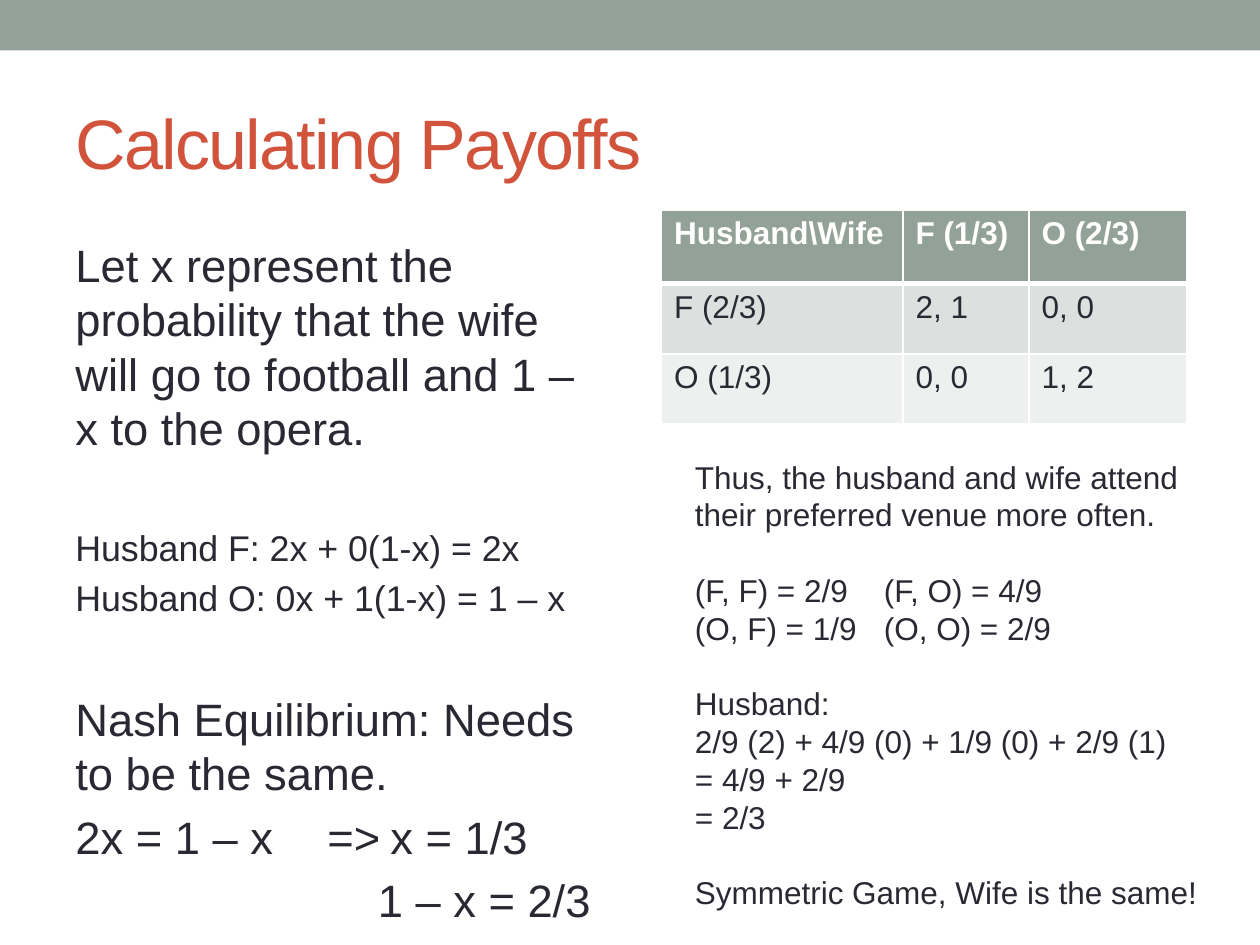
from lxml.etree import SubElement
from pptx import Presentation
from pptx.dml.color import RGBColor
from pptx.enum.shapes import MSO_SHAPE
from pptx.enum.text import MSO_ANCHOR, MSO_AUTO_SIZE
from pptx.oxml.ns import qn
from pptx.util import Inches, Pt

COLORS = {"sage": "93A299", "rust": "D2533C", "ink": "292934", "white": "FFFFFF",
          "band_dark": "DCE0DE", "band_light": "EEF0EF"}
FONT = "Arial"
COLUMNS, ROWS = 120, 90  # grid cells are 1/12 inch
LINE_HEIGHT = 1.2
LARGE, MEDIUM, SMALL = 25.9, 20.4, 18

# (text, size, follows a gap, left indent in grid columns)
DERIVATION = [
    ("Let x represent the probability that the wife will go to football "
     "and 1 – x to the opera.", LARGE, False, 0),
    ("Husband F: 2x + 0(1-x) = 2x", MEDIUM, True, 0),
    ("Husband O: 0x + 1(1-x) = 1 – x", MEDIUM, False, 0),
    ("Nash Equilibrium: Needs to be the same.", LARGE, True, 0),
    ("2x = 1 – x\t=>\tx = 1/3", LARGE, False, 0),
    ("1 – x = 2/3", LARGE, False, 28.8),
]
PAYOFFS = [
    ["Husband\\Wife", "F (1/3)", "O (2/3)"],
    ["F (2/3)", "2, 1", "0, 0"],
    ["O (1/3)", "0, 0", "1, 2"],
]
CONCLUSION = [
    ["Thus, the husband and wife attend their preferred venue more often."],
    ["(F, F) = 2/9\t(F, O) = 4/9", "(O, F) = 1/9\t(O, O) = 2/9"],
    ["Husband:", "2/9 (2) + 4/9 (0) + 1/9 (0) + 2/9 (1)", "= 4/9 + 2/9", "= 2/3"],
    ["Symmetric Game, Wife is the same!"],
]


def grid(units):
    return Inches(units / 12)


def place(box):
    return [grid(units) for units in box]


def color(name):
    return RGBColor.from_string(COLORS[name])


def add_run(paragraph, text, size, ink="ink", bold=False):
    run = paragraph.add_run()
    run.text = text
    run.font.name, run.font.size, run.font.bold = FONT, Pt(size), bold
    run.font.color.rgb = color(ink)
    return run


def add_text_frame(slide, box):
    frame = slide.shapes.add_textbox(*place(box)).text_frame
    frame.word_wrap = True
    return frame


def next_paragraph(frame):
    """Return the empty first paragraph, or a new one once that is used."""
    first = frame.paragraphs[0]
    return frame.add_paragraph() if first.runs else first


def add_band(slide, box):
    band = slide.shapes.add_shape(MSO_SHAPE.RECTANGLE, *place(box))
    band.shadow.inherit = False
    band.fill.solid()
    band.fill.fore_color.rgb = color("sage")
    band.line.fill.background()


def add_title(slide, box):
    frame = add_text_frame(slide, box)
    frame.vertical_anchor = MSO_ANCHOR.MIDDLE
    title = add_run(frame.paragraphs[0], "Calculating Payoffs", 40, "rust")
    title.font._element.set("spc", "-100")


def add_derivation(slide, box):
    """Each line has 20% of its size above it; a gap adds one large line."""
    frame = add_text_frame(slide, box)
    gap_height = LARGE * (LINE_HEIGHT + 0.2)
    for text, size, gap, indent in DERIVATION:
        paragraph = next_paragraph(frame)
        paragraph.space_before = Pt(0.2 * size + gap * gap_height)
        if indent:
            paragraph._p.get_or_add_pPr().set("marL", str(grid(indent)))
        add_run(paragraph, text, size)


def add_cell_borders(cell, bottom_width):
    properties = cell._tc.get_or_add_tcPr()
    widths = {"a:lnL": 1, "a:lnR": 1, "a:lnT": 1, "a:lnB": bottom_width}
    for position, (tag, width) in enumerate(widths.items()):
        border = SubElement(properties, qn(tag), w=str(Pt(width)))
        properties.insert(position, border)
        fill = SubElement(border, qn("a:solidFill"))
        SubElement(fill, qn("a:srgbClr"), val=COLORS["white"])


def add_payoff_table(slide, box):
    table = slide.shapes.add_table(len(PAYOFFS), len(PAYOFFS[0]), *place(box)).table
    for column, width in zip(table.columns, (23, 12, 15)):
        column.width = grid(width)
    for row, height in zip(table.rows, (7, 6.7, 6.7)):
        row.height = grid(height)
    bands = ("sage", "band_dark", "band_light")
    for r, (payoffs, band) in enumerate(zip(PAYOFFS, bands)):
        header = r == 0
        for c, payoff in enumerate(payoffs):
            cell = table.cell(r, c)
            cell.fill.solid()
            cell.fill.fore_color.rgb = color(band)
            add_run(cell.text_frame.paragraphs[0], payoff, SMALL,
                    "white" if header else "ink", header)
            add_cell_borders(cell, 3 if r < 2 and header else 1)
            if r == 1:
                cell._tc.tcPr.find(qn("a:lnT")).set("w", str(Pt(3)))


def add_conclusion(slide, box):
    frame = add_text_frame(slide, box)
    frame.auto_size = MSO_AUTO_SIZE.SHAPE_TO_FIT_TEXT
    for b, block in enumerate(CONCLUSION):
        for i, text in enumerate(block):
            paragraph = next_paragraph(frame)
            if b and i == 0:
                paragraph.space_before = Pt(SMALL * LINE_HEIGHT)
            add_run(paragraph, text, SMALL)


def main():
    presentation = Presentation()
    presentation.slide_width, presentation.slide_height = grid(COLUMNS), grid(ROWS)
    slide = presentation.slides.add_slide(presentation.slide_layouts[6])
    add_band(slide, (0, 0, COLUMNS, 4.8))
    add_title(slide, (6, 7, 108, 13))
    add_derivation(slide, (6, 22, 53, 62))
    add_payoff_table(slide, (63, 20, 50, 20.4))
    add_conclusion(slide, (65, 43, 51, 48.5))
    presentation.save("out.pptx")


if __name__ == "__main__":
    main()
